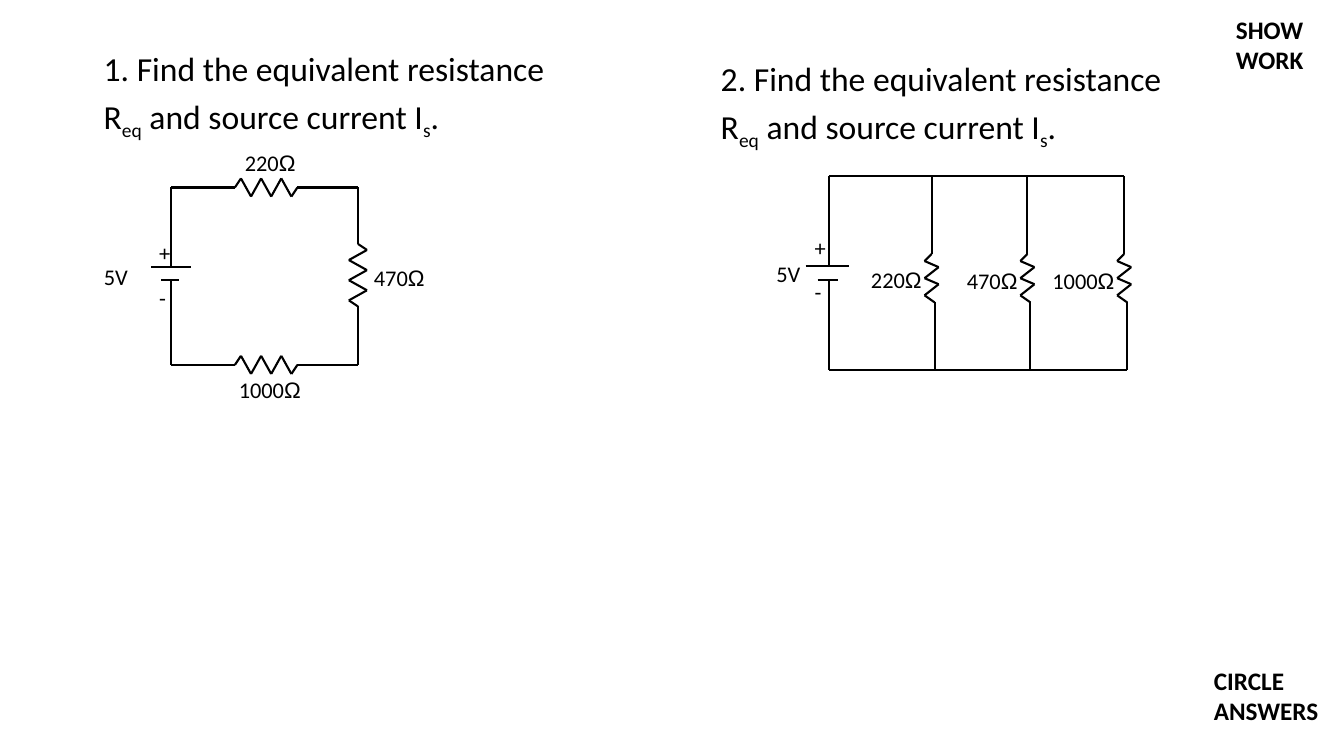
from itertools import pairwise

from lxml.etree import SubElement
from pptx import Presentation
from pptx.dml.color import RGBColor
from pptx.enum.shapes import MSO_CONNECTOR as Connector
from pptx.enum.text import MSO_AUTO_SIZE as AutoSize, PP_ALIGN as Align
from pptx.oxml.ns import qn
from pptx.util import Inches, Pt

# Content: a run is (text, style), where a style is a key of THEME["styles"]
QUESTIONS = [("1", (0.93, 0.37)), ("2", (7.05, 0.47))]
QUESTION_RUNS = [
    ("Find the equivalent resistance R", "question"), ("eq", "subscript"),
    (" and source current I", "question"), ("s", "subscript"), (".", "question"),
]
NOTES = [
    (["SHOW", "WORK"], (12.16, 0.09, 0.88, 0.71)),
    (["CIRCLE", "ANSWERS"], (11.94, 6.55, 1.25, 0.71)),
]
VOLTAGE = "5V"
SERIES_RESISTORS = [  # value, label position, start and end of the lead, vertical
    ("220", (2.33, 1.43), (1.7, 1.86), (3.55, 1.86), False),
    ("470", (3.61, 2.57), (3.55, 1.86), (3.55, 3.62), True),
    ("1000", (2.27, 3.68), (1.7, 3.62), (3.55, 3.62), False),
]
PARALLEL_RESISTORS = [  # value, label position, branch x
    ("220", (8.54, 2.59), 9.24),
    ("470", (9.49, 2.6), 10.19),
    ("1000", (10.34, 2.6), 11.15),
]
BATTERIES = [  # wire x, top, bottom, plate heights, long and short plates, labels
    dict(x=1.7, top=1.86, bottom=3.62, plates=(2.65, 2.78),
         long=(1.5, 1.89), short=(1.6, 1.78), volts=(0.71, 2.52), signs=(1.48, 2.28)),
    dict(x=8.22, top=1.75, bottom=3.67, plates=(2.64, 2.78),
         long=(7.99, 8.42), short=(8.11, 8.31), volts=(7.38, 2.49), signs=(7.98, 2.23)),
]

THEME = {
    "ink": RGBColor(0, 0, 0),
    "wire": Pt(1.5),
    "styles": {
        "question": dict(name="Calibri", size=Pt(24)),
        "subscript": dict(name="Calibri", size=Pt(24)),
        "label": dict(name="Calibri", size=Pt(16)),
        "ohm": dict(name="Arial", size=Pt(16)),
        "note": dict(name="Calibri", size=Pt(18), bold=True),
    },
}
SPACED = dict(line_spacing=1.15, space_after=Pt(10))
SERIES_TOOTH, SERIES_SWING, SERIES_END = 0.1, 0.09, 0.06
BRANCH_SWING, BRANCH_SHIFT = 0.07, 0.03
BRANCH_TEETH = [2.59, 2.65, 2.76, 2.82, 2.93]

deck = Presentation()
deck.slide_width, deck.slide_height = Inches(13.33), Inches(7.5)
page = deck.slides.add_slide(deck.slide_layouts[6])


def add_text(at, lines, para_format=None, wrap=False):
    box = page.shapes.add_textbox(*map(Inches, at))
    frame = box.text_frame
    frame.word_wrap = wrap
    frame.auto_size = AutoSize.NONE if wrap else AutoSize.SHAPE_TO_FIT_TEXT
    for index, runs in enumerate(lines):
        para = frame.paragraphs[0] if index == 0 else frame.add_paragraph()
        for key, value in (para_format or {}).items():
            setattr(para, key, value)
        for text, style in runs:
            span = para.add_run()
            span.text = text
            span.font.color.rgb = THEME["ink"]
            for key, value in THEME["styles"][style].items():
                setattr(span.font, key, value)
            if style == "subscript":
                span.font._element.set("baseline", "-25000")


def add_wire(*points):
    """Join the points with straight lines."""
    for start, end in pairwise(points):
        line = page.shapes.add_connector(
            Connector.STRAIGHT, *map(Inches, (*start, *end)))
        line.line.color.rgb = THEME["ink"]
        line.line.width = THEME["wire"]
        SubElement(line._element.spPr, qn("a:effectLst"))


def add_resistance(value, position):
    width = 0.72 if len(value) == 3 else 0.83
    add_text((*position, width, 0.37), [[(value, "label"), ("Ω", "ohm")]])


def series_points(start, end, vertical):
    """Lead, six evenly spaced teeth, lead."""
    axis = 1 if vertical else 0
    length = 5 * SERIES_TOOTH + 2 * SERIES_END
    # The horizontal resistors sit a little left of the middle of their lead
    first = 2.42 if vertical else 2.33
    side = SERIES_SWING if vertical else -SERIES_SWING
    steps = [(first, 0)]
    steps += [(first + SERIES_END + i * SERIES_TOOTH, side * (-1) ** i) for i in range(6)]
    steps += [(first + length, 0)]
    across = start[1 - axis]
    teeth = [(across + off, along) if vertical else (along, across + off)
             for along, off in steps]
    return [start, *teeth, end]


# Batteries
for cell in BATTERIES:
    x, (upper, lower) = cell["x"], cell["plates"]
    add_wire((x, cell["top"]), (x, upper))
    add_wire((x, lower), (x, cell["bottom"]))
    for (left, right), y in ((cell["long"], upper), (cell["short"], lower)):
        add_wire((left, y), (right, y))
    add_text((*cell["volts"], 0.88, 0.42), [[(VOLTAGE, "label")]],
             SPACED | dict(alignment=Align.CENTER), wrap=True)
    add_text((*cell["signs"], 0.31, 0.86), [[("+", "label")], [("-", "label")]], SPACED)

# Series circuit
for value, position, start, end, vertical in SERIES_RESISTORS:
    add_wire(*series_points(start, end, vertical))
    add_resistance(value, position)

# Parallel circuit: two rails and their branches
source, last_x = BATTERIES[1], PARALLEL_RESISTORS[-1][2]
for y, right in ((source["top"], last_x), (source["bottom"], last_x + BRANCH_SHIFT)):
    add_wire((source["x"], y), (right, y))
for value, position, x in PARALLEL_RESISTORS:
    teeth = [(x - BRANCH_SWING * (-1) ** i, y) for i, y in enumerate(BRANCH_TEETH)]
    foot = x + BRANCH_SHIFT
    add_wire((x, source["top"]), (x, 2.52), *teeth, (foot, 3), (foot, source["bottom"]))
    add_resistance(value, position)

# Questions and notes
for number, position in QUESTIONS:
    runs = [(f"{number}. {QUESTION_RUNS[0][0]}", "question"), *QUESTION_RUNS[1:]]
    add_text((*position, 4.89, 0.98), [runs], SPACED, wrap=True)
for lines, at in NOTES:
    add_text(at, [[(line, "note")] for line in lines])

deck.save("out.pptx")
